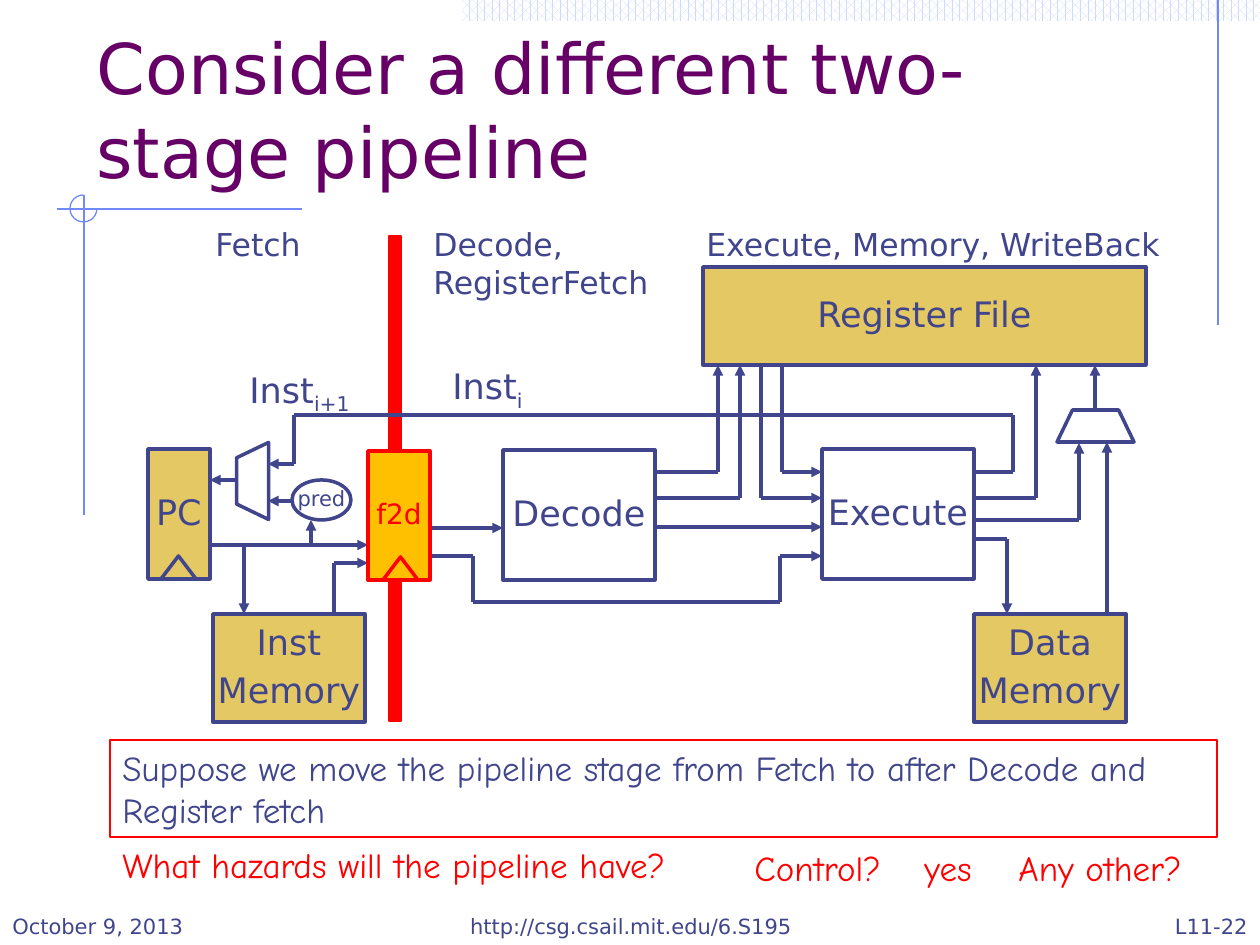
from dataclasses import dataclass

from lxml import etree
from pptx import Presentation
from pptx.dml.color import RGBColor
from pptx.enum.dml import MSO_PATTERN
from pptx.enum.shapes import MSO_CONNECTOR, MSO_SHAPE
from pptx.enum.text import MSO_ANCHOR, PP_ALIGN
from pptx.oxml.ns import qn
from pptx.util import Pt

RECT, OVAL, ARC = MSO_SHAPE.RECTANGLE, MSO_SHAPE.OVAL, MSO_SHAPE.ARC
TRIANGLE, MUX = MSO_SHAPE.ISOSCELES_TRIANGLE, MSO_SHAPE.FLOWCHART_MANUAL_OPERATION
STRAIGHT = MSO_CONNECTOR.STRAIGHT
DOTS = MSO_PATTERN.PERCENT_60
TOP, MIDDLE, BOTTOM = MSO_ANCHOR.TOP, MSO_ANCHOR.MIDDLE, MSO_ANCHOR.BOTTOM
LEFT, CENTER, RIGHT = PP_ALIGN.LEFT, PP_ALIGN.CENTER, PP_ALIGN.RIGHT
EMU_PER_PX = 914400 / 126
TITLE_ONLY = 5


@dataclass(frozen=True)
class Theme:
    ink: str = "40458C"
    title: str = "660066"
    red: str = "FF0000"
    gold: str = "E4C864"
    amber: str = "FFC000"
    white: str = "FFFFFF"
    rule: str = "6F89F7"
    band: str = "CFDBFD"
    font: str = "DejaVu Sans"
    hand: str = "Comic Neue"
    title_size: int = 40
    body: int = 20
    label: int = 18
    register: int = 16
    small: int = 12
    thick: float = 2
    thin: float = 0.75


T = Theme()


def px(n):
    return round(n * EMU_PER_PX)


def rgb(color):
    return RGBColor.from_string(color)


def write(tf, text, size=T.body, color=T.ink, font=T.font, align=LEFT,
          anchor=TOP, wrap=True, sub="", leading=None, gap=0):
    """Fill a text frame, one paragraph per line; sub is a closing subscript."""
    tf.word_wrap = wrap
    tf.vertical_anchor = anchor
    for i, line in enumerate(text.split("\n")):
        p = tf.add_paragraph() if i else tf.paragraphs[0]
        p.alignment = align
        p.space_before = Pt(gap if i else 0)
        if leading:
            p.line_spacing = leading
        for part in filter(None, (line, sub)):
            r = p.add_run()
            r.text = part
            r.font.size, r.font.name = Pt(size), font
            r.font.color.rgb = rgb(color)
            if part == sub:
                r._r.get_or_add_rPr().set("baseline", "-25000")


def add_text(s, box, text, **fmt):
    write(s.shapes.add_textbox(*map(px, box)).text_frame, text, **fmt)


def add_shape(s, kind, box, fill=None, line=T.ink, width=T.thick):
    sp = s.shapes.add_shape(kind, *map(px, box))
    sp.shadow.inherit = False
    if fill:
        sp.fill.solid()
        sp.fill.fore_color.rgb = rgb(fill)
    else:
        sp.fill.background()
    if line:
        sp.line.color.rgb = rgb(line)
        sp.line.width = Pt(width)
    else:
        sp.line.fill.background()
    return sp


def add_block(s, box, text, fill=None, color=T.ink, size=T.body, kind=RECT):
    sp = add_shape(s, kind, box, fill, color)
    write(sp.text_frame, text, size=size, color=color, align=CENTER,
          anchor=MIDDLE, wrap=False, leading=0.9, gap=6)


def add_wire(s, *points, arrow=True, color=T.ink, width=T.thick):
    """Join the points with straight segments; the last may carry an arrowhead."""
    for start, end in zip(points, points[1:]):
        c = s.shapes.add_connector(STRAIGHT, *map(px, start + end))
        c.line.color.rgb = rgb(color)
        c.line.width = Pt(width)
        etree.SubElement(c._element.spPr, qn("a:effectLst"))
    if arrow:
        etree.SubElement(c.line._get_or_add_ln(), qn("a:tailEnd"), type="triangle")


def add_decoration(s):
    band = add_shape(s, RECT, (462, 0, 798, 21), line=None)
    band.fill.patterned()
    band.fill.pattern = DOTS
    band.fill.fore_color.rgb = rgb(T.band)
    band.fill.back_color.rgb = rgb(T.white)
    for ends in (((1218, 0), (1218, 325)), ((302, 209), (57, 209)),
                 ((84, 195), (84, 515))):
        add_wire(s, *ends, arrow=False, color=T.rule, width=T.thin)
    arc = add_shape(s, ARC, (70, 195, 27, 27), line=T.rule, width=T.thin)
    arc.adjustments[0], arc.adjustments[1] = 0, 162


def add_title(s, text):
    title = s.shapes.title
    title.left, title.top, title.width, title.height = map(px, (84, 42, 1071, 157))
    write(title.text_frame, text, size=T.title_size, color=T.title, anchor=BOTTOM)


def add_datapath(s):
    add_shape(s, RECT, (389, 236, 12, 485), T.red, T.red, T.thin)
    add_block(s, (148, 449, 62, 130), "PC", T.gold)
    add_block(s, (503, 450, 152, 130), "Decode")
    add_block(s, (703, 267, 443, 98), "Register File", T.gold)
    add_block(s, (822, 449, 152, 130), "Execute")
    add_block(s, (213, 614, 152, 108), "Inst\nMemory", T.gold)
    add_block(s, (974, 614, 152, 108), "Data\nMemory", T.gold)
    add_block(s, (292, 480, 59, 40), "pred", size=T.small, kind=OVAL)
    for box, turn in (((1057, 410, 77, 32), 180), ((214, 465, 77, 32), 90)):
        add_shape(s, MUX, box, T.white).rotation = turn

    wires = (
        # fetch
        ((210, 545), (368, 545)),
        ((244, 545), (244, 614)),
        ((334, 614), (334, 563), (368, 563)),
        ((311, 545), (311, 520)),
        ((292, 501), (268, 501)),
        ((237, 480), (210, 480)),
        # decode and register read
        ((430, 528), (503, 528)),
        ((655, 472), (718, 472), (718, 365)),
        ((655, 498), (740, 498), (740, 365)),
        ((782, 365), (782, 472), (822, 472)),
        ((761, 365), (761, 498), (822, 498)),
        ((655, 527), (822, 527)),
        ((430, 556), (473, 556), (473, 602), (780, 602), (780, 556), (822, 556)),
        # execute, memory and write back
        ((974, 472), (1013, 472), (1013, 415), (294, 415), (294, 464), (268, 464)),
        ((974, 498), (1036, 498), (1036, 365)),
        ((974, 520), (1079, 520), (1079, 443)),
        ((974, 539), (1007, 539), (1007, 614)),
        ((1107, 614), (1107, 442)),
        ((1095, 410), (1095, 365)),
    )
    for points in wires:
        add_wire(s, *points)

    add_block(s, (368, 451, 62, 129), "f2d", T.amber, T.red, T.register)
    add_shape(s, TRIANGLE, (161, 556, 35, 23))
    add_shape(s, TRIANGLE, (383, 557, 35, 23), line=T.red)


def add_labels(s):
    add_text(s, (203, 219, 111, 50), "Fetch", size=T.label, wrap=False)
    add_text(s, (421, 219, 241, 89), "Decode,\nRegisterFetch", size=T.label)
    add_text(s, (694, 219, 493, 50), "Execute, Memory, WriteBack", size=T.label)
    add_text(s, (237, 362, 135, 55), "Inst", sub="i+1", wrap=False)
    add_text(s, (440, 358, 101, 55), "Inst", sub="i", wrap=False)


def add_questions(s):
    note = add_shape(s, RECT, (110, 740, 1107, 97), line=T.red, width=T.thin)
    write(note.text_frame, "Suppose we move the pipeline stage from Fetch to "
          "after Decode and Register fetch", font=T.hand)
    for box, text in (((110, 837, 629, 55), "What hazards will the pipeline have?"),
                      ((742, 840, 168, 55), "Control?"),
                      ((912, 840, 84, 55), "yes"),
                      ((1006, 840, 230, 55), "Any other?")):
        add_text(s, box, text, color=T.red, font=T.hand)


def add_footer(s):
    for left, width, text, align in (
            (0, 262, "October 9, 2013", LEFT),
            (423, 416, "http://csg.csail.mit.edu/6.S195", CENTER),
            (998, 262, "L11-22", RIGHT)):
        add_text(s, (left, 882, width, 63), text, size=T.small, align=align,
                 anchor=BOTTOM)


def main():
    prs = Presentation()
    prs.slide_width, prs.slide_height = px(1260), px(945)
    s = prs.slides.add_slide(prs.slide_layouts[TITLE_ONLY])
    add_decoration(s)
    add_title(s, "Consider a different two-stage pipeline")
    add_datapath(s)
    add_labels(s)
    add_questions(s)
    add_footer(s)
    prs.save("out.pptx")


if __name__ == "__main__":
    main()
